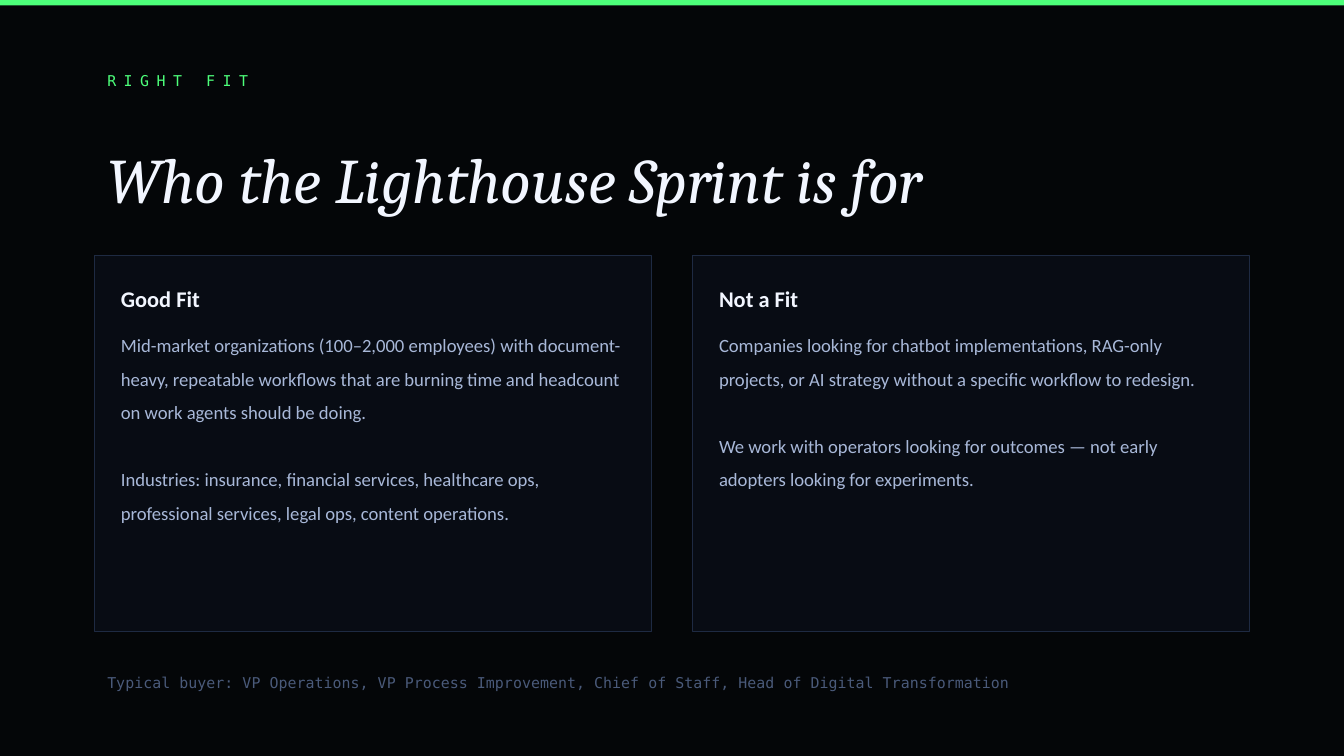
from pptx import Presentation
from pptx.dml.color import RGBColor
from pptx.enum.shapes import MSO_SHAPE
from pptx.enum.text import MSO_ANCHOR, MSO_AUTO_SIZE, PP_ALIGN
from pptx.oxml.ns import qn
from pptx.util import Inches, Pt

EYEBROW = "RIGHT FIT"
TITLE = "Who the Lighthouse Sprint is for"
CARDS = [
    ("Good Fit", [
        "Mid-market organizations (100–2,000 employees) with document-heavy, repeatable workflows that are burning time and headcount on work agents should be doing.",
        "Industries: insurance, financial services, healthcare ops, professional services, legal ops, content operations.",
    ]),
    ("Not a Fit", [
        "Companies looking for chatbot implementations, RAG-only projects, or AI strategy without a specific workflow to redesign.",
        "We work with operators looking for outcomes — not early adopters looking for experiments.",
    ]),
]
BUYER = "Typical buyer: VP Operations, VP Process Improvement, Chief of Staff, Head of Digital Transformation"

MONO = "DejaVu Sans Mono"
EYEBROW_FORMAT = {"name": MONO, "size": Pt(8), "color": "4DFF7A"}
TITLE_FORMAT = {"name": "Cambria", "size": Pt(34), "italic": True, "color": "F2F6FF"}
HEADING_FORMAT = {"name": "Calibri", "size": Pt(12), "bold": True, "color": "F2F6FF"}
BODY_FORMAT = {"name": "Calibri", "size": Pt(10), "bold": False, "color": "A8B8D8"}
BUYER_FORMAT = {"name": MONO, "size": Pt(8), "color": "4A5A7A"}

SLIDE_WIDTH = 10
SLIDE_HEIGHT = SLIDE_WIDTH * 9 / 16
MARGIN, GAP, PADDING = 0.7, 0.3, 0.2
CONTENT_WIDTH = SLIDE_WIDTH - 2 * MARGIN
CARD_TOP, CARD_HEIGHT = 1.9, 2.8
CARD_WIDTH = (CONTENT_WIDTH - GAP) / 2


def paint(color_format, value):
    color_format.rgb = RGBColor.from_string(value)


def place(shape, left, top, width, height):
    box = {"left": left, "top": top, "width": width, "height": height}
    for name, value in box.items():
        setattr(shape, name, Inches(value))


def write(shape, paragraphs, font_format, anchor=MSO_ANCHOR.MIDDLE,
          inset=None, line_spacing=1.0, gap=0, tracking=0):
    frame = shape.text_frame
    frame_format = {"word_wrap": True, "auto_size": MSO_AUTO_SIZE.NONE,
                    "vertical_anchor": anchor}
    if inset is not None:
        for side in ("left", "top", "right", "bottom"):
            frame_format[f"margin_{side}"] = Inches(inset)
    for name, value in frame_format.items():
        setattr(frame, name, value)
    for index, text in enumerate(paragraphs):
        paragraph = frame.paragraphs[0] if index == 0 else frame.add_paragraph()
        properties = paragraph._p.get_or_add_pPr()
        properties.set("marL", "0")
        properties.set("indent", "0")
        properties.append(properties.makeelement(qn("a:buNone"), {}))
        paragraph.alignment = PP_ALIGN.LEFT
        paragraph.line_spacing = line_spacing
        paragraph.space_before = Pt(gap if index else 0)
        run = paragraph.add_run()
        run.text = text
        for name, value in font_format.items():
            if name == "color":
                paint(run.font.color, value)
            else:
                setattr(run.font, name, value)
        if tracking:
            run._r.get_or_add_rPr().set("spc", str(tracking * 100))


def add_panel(slide, box, fill, line=None):
    shape = slide.shapes.add_shape(MSO_SHAPE.RECTANGLE, *map(Inches, box))
    shape.shadow.inherit = False
    shape.fill.solid()
    paint(shape.fill.fore_color, fill)
    if line:
        paint(shape.line.color, line)
        shape.line.width = Pt(0.5)
    else:
        shape.line.fill.background()
    return shape


def add_label(slide, top, height, text, font_format, **options):
    box = (MARGIN, top, CONTENT_WIDTH, height)
    label = slide.shapes.add_textbox(*map(Inches, box))
    write(label, [text], font_format, **options)


def main():
    presentation = Presentation()
    presentation.slide_width = Inches(SLIDE_WIDTH)
    presentation.slide_height = Inches(SLIDE_HEIGHT)
    slide = presentation.slides.add_slide(
        presentation.slide_layouts.get_by_name("Comparison"))
    slide.background.fill.solid()
    paint(slide.background.fill.fore_color, "040608")

    add_panel(slide, (0, 0, SLIDE_WIDTH, 0.04), "4DFF7A")
    add_label(slide, 0.45, 0.3, EYEBROW, EYEBROW_FORMAT, tracking=4)
    title, *card_texts = slide.placeholders
    place(title, MARGIN, 0.8, CONTENT_WIDTH, 1)
    write(title, [TITLE], TITLE_FORMAT, line_spacing=1.1)

    for index, (heading_text, body_text) in enumerate(CARDS):
        left = MARGIN + index * (CARD_WIDTH + GAP)
        card = add_panel(slide, (left, CARD_TOP, CARD_WIDTH, CARD_HEIGHT),
                         "080C14", "1E2A42")
        title._element.addprevious(card._element)
        heading, body = card_texts[2 * index:2 * index + 2]
        text_left, text_width = left + PADDING, CARD_WIDTH - 2 * PADDING
        place(heading, text_left, CARD_TOP + 0.15, text_width, 0.35)
        write(heading, [heading_text], HEADING_FORMAT, inset=0)
        place(body, text_left, CARD_TOP + 0.5, text_width, 2.1)
        write(body, body_text, BODY_FORMAT, anchor=MSO_ANCHOR.TOP,
              inset=0, line_spacing=1.5, gap=18)

    add_label(slide, 4.9, 0.35, BUYER, BUYER_FORMAT)
    presentation.save("out.pptx")


if __name__ == "__main__":
    main()
